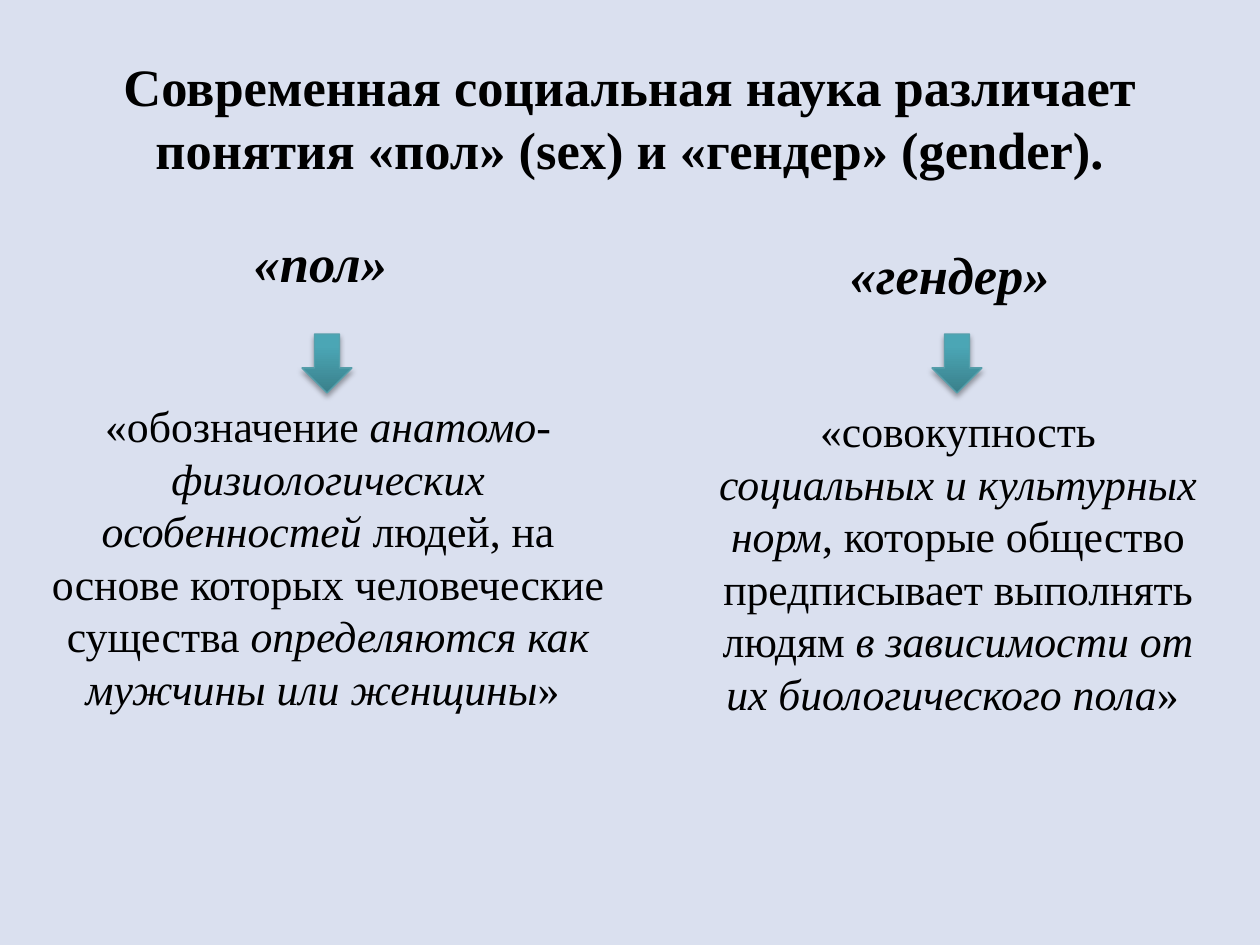
from copy import deepcopy
from lxml.etree import SubElement as Sub
from pptx import Presentation
from pptx.dml.color import RGBColor as Rgb
from pptx.enum.shapes import MSO_SHAPE as Kind
from pptx.enum.text import MSO_ANCHOR as Anchor, PP_ALIGN as Align
from pptx.oxml.ns import qn
from pptx.util import Emu, Pt

HUES = {"back": "DAE0EF", "ink": "000000", "dark": "3A808B",
        "mid": "4BA6B5", "light": "49A8B8", "edge": "56A0AC"}
HEAD = {"size": Pt(30), "bold": True}
TERM = {**HEAD, "italic": True}
BODY = {"size": Pt(25)}


def px(*nums):
    return [Emu(round(n * 914400 / 126)) for n in nums]


def hue(name):
    return Rgb.from_string(HUES[name])


deck = Presentation()
deck.slide_width, deck.slide_height = px(1260, 945)
slide = deck.slides.add_slide(deck.slide_layouts[6])
slide.background.fill.solid()
slide.background.fill.fore_color.rgb = hue("back")

texts = [
    ((63, 38, 1134, 157), HEAD, Anchor.MIDDLE, 1,
     ["Современная социальная наука различает понятия «пол» (sex) и «гендер» (gender)."]),
    ((20, 224, 614, 118), TERM, Anchor.TOP, 1, ["«пол» "]),
    ((699, 204, 515, 188), TERM, Anchor.TOP, 1.5, ["«гендер» "]),
    ((35, 393, 586, 331), BODY, Anchor.TOP, 1,
     ["«обозначение ", "анатомо-физиологических особенностей",
      " людей, на основе которых человеческие существа ",
      "определяются как мужчины или женщины", "» "]),
    ((699, 398, 518, 384), BODY, Anchor.TOP, 1,
     ["«совокупность ", "социальных и культурных норм",
      ", которые общество предписывает выполнять людям ",
      "в зависимости от их биологического пола", "» "]),
]
for area, look, anchor, lead, parts in texts:
    frame = slide.shapes.add_textbox(*px(*area)).text_frame
    frame.word_wrap = True
    frame.vertical_anchor = anchor
    para = frame.paragraphs[0]
    para.alignment = Align.CENTER
    para.line_spacing = lead
    for i, part in enumerate(parts):
        run = para.add_run()
        run.text = part
        run.font.color.rgb = hue("ink")
        form = {"name": "Times New Roman", "italic": i % 2 == 1, **look}
        for key, val in form.items():
            setattr(run.font, key, val)

for left in (302, 932):
    arrow = slide.shapes.add_shape(Kind.DOWN_ARROW, *px(left, 334, 50, 59))
    arrow.line.color.rgb = hue("edge")
    arrow.line.width = Pt(0.75)
    arrow.fill.gradient()
    arrow.fill.gradient_angle = 90
    props = arrow._element.spPr
    stops = props.find(".//" + qn("a:gsLst"))
    stops.insert(1, deepcopy(stops[0]))
    shades = [(0, "dark"), (0.8, "mid"), (1, "light")]
    for stop, (pos, name) in zip(arrow.fill.gradient_stops, shades):
        stop.position = pos
        stop.color.rgb = hue(name)
    arrow.shadow.inherit = False
    shade = Sub(props.find(qn("a:effectLst")), qn("a:outerShdw"),
                blurRad=str(Pt(3.1)), dist=str(Pt(1.8)), dir="5400000", rotWithShape="0")
    tint = Sub(shade, qn("a:srgbClr"), val=HUES["ink"])
    Sub(tint, qn("a:alpha"), val="35000")

deck.save("out.pptx")
